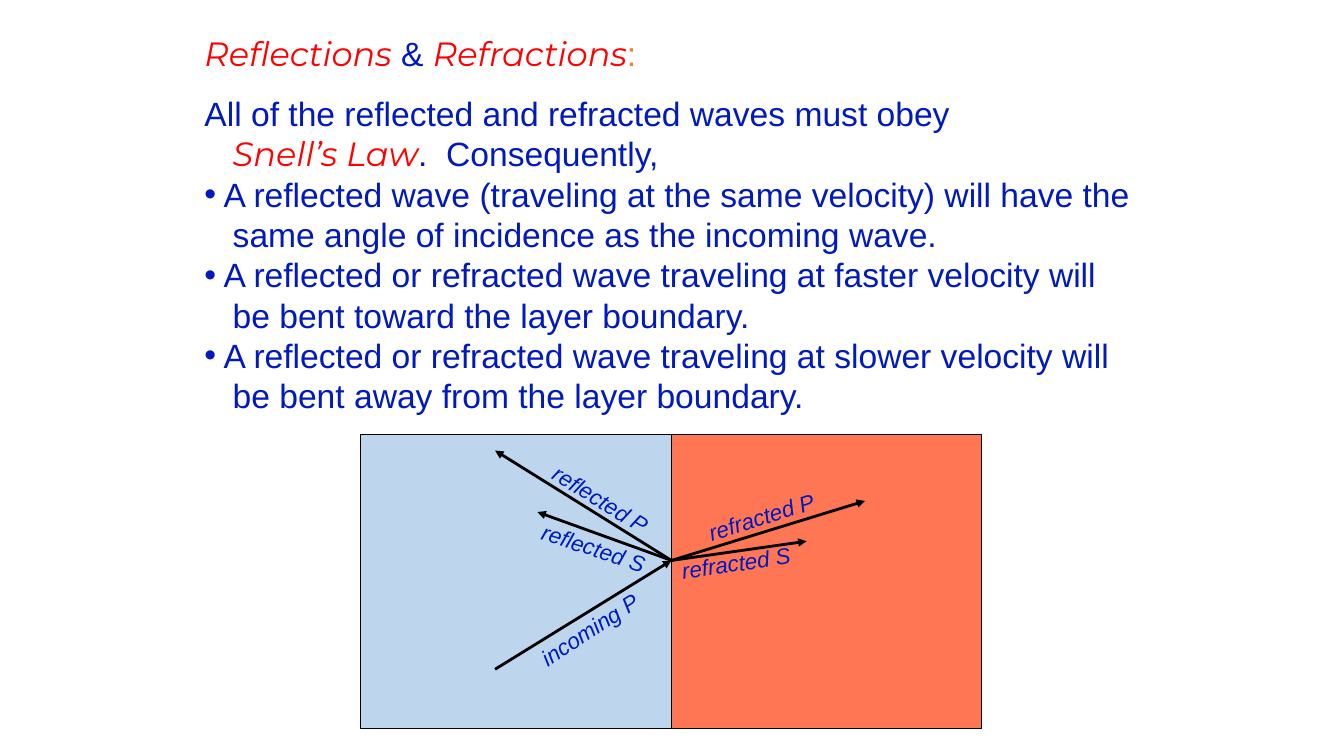
from lxml import etree
from pptx import Presentation
from pptx.dml.color import RGBColor
from pptx.enum.shapes import MSO_CONNECTOR as CONN, MSO_SHAPE as SHAPE
from pptx.oxml.ns import qn
from pptx.util import Pt

PX = 9144
BLUE = RGBColor(0x00, 0x1A, 0xBF)
RED = RGBColor(0xFF, 0x00, 0x00)
ORANGE = RGBColor(0xED, 0x7D, 0x31)
BLACK = RGBColor(0x00, 0x00, 0x00)
LEFT_LAYER = RGBColor(0x9D, 0xC3, 0xE6)
RIGHT_LAYER = RGBColor(0xFF, 0x33, 0x00)

BULLETS = [
    ("A reflected wave (traveling at the same velocity) will have the",
     "same angle of incidence as the incoming wave."),
    ("A reflected or refracted wave traveling at faster velocity will",
     "be bent toward the layer boundary."),
    ("A reflected or refracted wave traveling at slower velocity will",
     "be bent away from the layer boundary."),
]
# (end dx, end dy, incoming, label, label dx, label dy, width, angle)
WAVES = [
    (-175, 108, True, "incoming P", -146, 50, 130, 327),
    (-175, -109, False, "reflected P", -133, -79, 126, 31.7),
    (-133, -48, False, "reflected S", -140, -31, 126, 18.2),
    (192, -59, False, "refracted P", 25, -62, 130, 342.2),
    (134, -19, False, "refracted S", 0, -16, 130, 351.6),
]


def px(*lengths):
    """Turn px lengths into EMU."""
    return [round(n * PX) for n in lengths]


def add_run(p, text, size=24, font="Arial", color=BLUE, italic=False):
    """Append a formatted run to a paragraph."""
    r = p.add_run()
    r.text = text
    r.font.size, r.font.name, r.font.italic = Pt(size), font, italic
    r.font.color.rgb = color


def add_term(p, text):
    """Append a highlighted term."""
    add_run(p, text, font="Montserrat", color=RED, italic=True)


def add_line(tf, margin=0, bullet=False):
    """Add a paragraph, indented or with a hanging bullet."""
    p = tf.add_paragraph()
    p.line_spacing = Pt(28.8)
    pPr = p._p.get_or_add_pPr()
    pPr.set("marL", str(margin * PX))
    pPr.set("indent", str(-margin * PX if bullet else 0))
    if bullet:
        etree.SubElement(pPr, qn("a:buFont")).set("typeface", "Arial")
        etree.SubElement(pPr, qn("a:buChar")).set("char", "•")
    return p


def add_explanation(s, x, y, w, h):
    """Write the title and the rules that follow from the law."""
    tf = s.shapes.add_textbox(*px(x, y, w, h)).text_frame
    tf.word_wrap = True
    p = tf.paragraphs[0]
    p.line_spacing = Pt(28.8)
    add_term(p, "Reflections")
    add_run(p, " & ")
    add_term(p, "Refractions")
    add_run(p, ":", color=ORANGE)
    p = add_line(tf)
    p.space_before = Pt(14)
    add_run(p, "All of the reflected and refracted waves must obey")
    p = add_line(tf, 28)
    add_term(p, "Snell’s Law")
    add_run(p, ".  Consequently,")
    for first, second in BULLETS:
        add_run(add_line(tf, 19, bullet=True), first)
        add_run(add_line(tf, 28), second)


def add_layer(s, x, y, w, h, color):
    """Draw one translucent rock layer."""
    sp = s.shapes.add_shape(SHAPE.RECTANGLE, *px(x, y, w, h))
    sp.shadow.inherit = False
    sp.fill.solid()
    sp.fill.fore_color.rgb = color
    clr = sp.fill._xPr.find(qn("a:solidFill"))[0]
    etree.SubElement(clr, qn("a:alpha")).set("val", "67000")
    sp.line.color.rgb = BLACK
    sp.line.width = Pt(0.75)


def add_arrow(s, start, end):
    """Draw a ray with an arrowhead at its end."""
    c = s.shapes.add_connector(CONN.STRAIGHT, *px(*start, *end))
    c.line.color.rgb = BLACK
    c.line.width = Pt(2)
    etree.SubElement(c.line._get_or_add_ln(), qn("a:tailEnd")).set("type", "triangle")
    etree.SubElement(c._element.spPr, qn("a:effectLst"))


def add_label(s, x, y, w, text, angle):
    """Write a wave name along its ray."""
    tb = s.shapes.add_textbox(*px(x, y, w, 37))
    tb.rotation = angle
    tb.text_frame.word_wrap = False
    add_run(tb.text_frame.paragraphs[0], text, size=16, italic=True)


def add_diagram(s, x, y, w, h):
    """Draw two layers and the waves meeting at their boundary."""
    half = w // 2
    for i, color in enumerate((LEFT_LAYER, RIGHT_LAYER)):
        add_layer(s, x + i * half, y, half, h, color)
    hit_x, hit_y = x + half, y + 125
    for dx, dy, incoming, text, label_dx, label_dy, label_w, angle in WAVES:
        ends = [(hit_x, hit_y), (hit_x + dx, hit_y + dy)]
        add_arrow(s, *(reversed(ends) if incoming else ends))
        add_label(s, hit_x + label_dx, hit_y + label_dy, label_w, text, angle)


def main():
    """Build and save the slide."""
    prs = Presentation()
    prs.slide_width, prs.slide_height = px(1333, 750)
    s = prs.slides.add_slide(prs.slide_layouts[6])
    add_explanation(s, 193, 28, 947, 394)
    add_diagram(s, 358, 431, 616, 292)
    prs.save("out.pptx")


if __name__ == "__main__":
    main()
